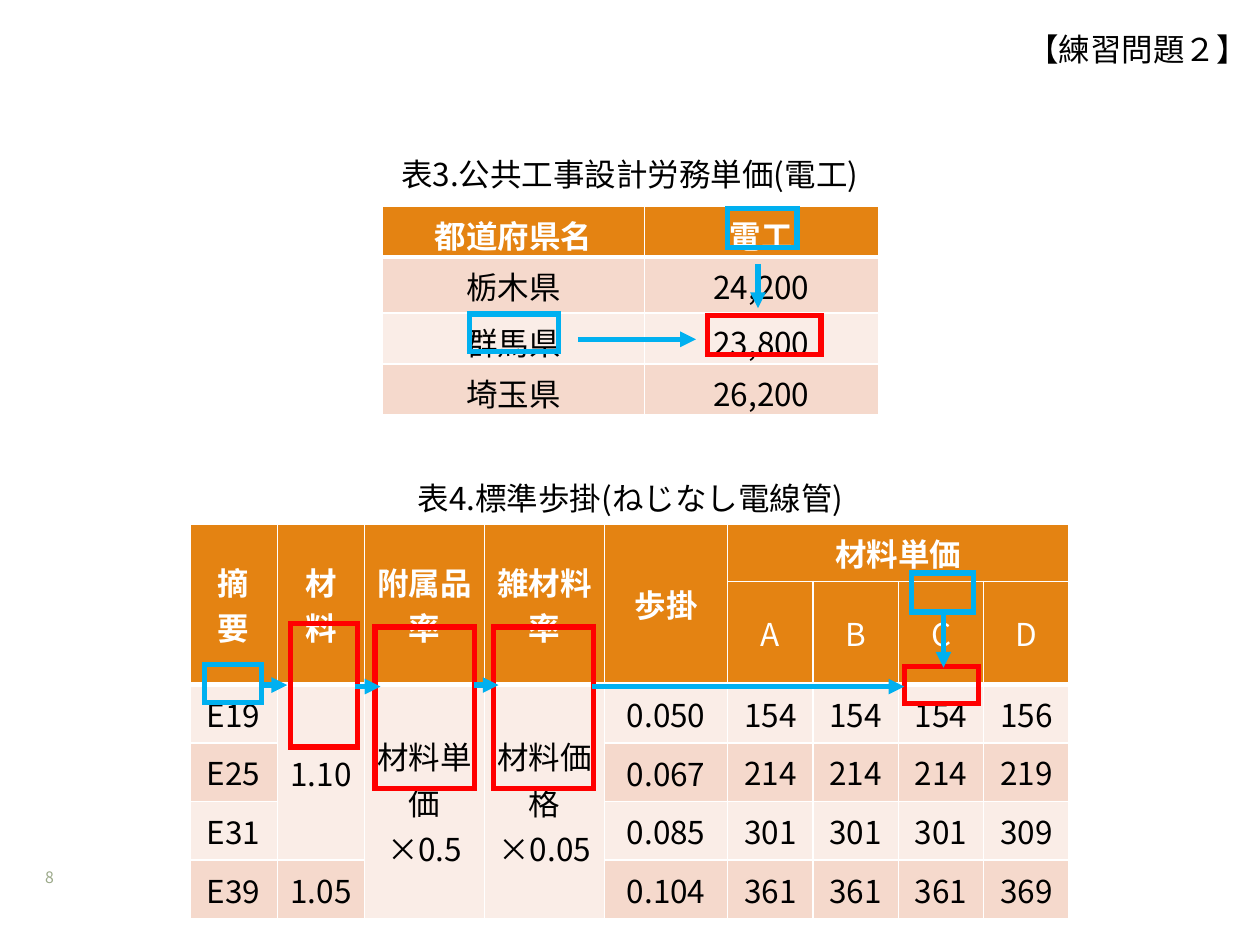
from dataclasses import dataclass

from lxml import etree
from pptx import Presentation
from pptx.dml.color import RGBColor
from pptx.enum.shapes import MSO_CONNECTOR, MSO_SHAPE
from pptx.enum.text import MSO_ANCHOR, PP_ALIGN
from pptx.oxml.ns import qn
from pptx.util import Cm, Pt

STRAIGHT = MSO_CONNECTOR.STRAIGHT
RECT = MSO_SHAPE.RECTANGLE
TOP, MIDDLE = MSO_ANCHOR.TOP, MSO_ANCHOR.MIDDLE
LEFT, CENTER, RIGHT = PP_ALIGN.LEFT, PP_ALIGN.CENTER, PP_ALIGN.RIGHT


@dataclass(frozen=True)
class Theme:
    font: str = "Noto Sans CJK JP"
    body: int = 18
    small: int = 9
    rule: int = 1
    thick: int = 3
    white: str = "FFFFFF"
    black: str = "000000"
    header: str = "E48312"
    dark_band: str = "F5D9CC"
    light_band: str = "FAEDE7"
    key: str = "00B0F0"
    result: str = "FF0000"
    page: str = "9AA888"


THEME = Theme()


def rgb(value):
    return RGBColor.from_string(value)


def write(tf, text, color, size=THEME.body, align=CENTER, bold=False):
    p = tf.paragraphs[0]
    p.alignment = align
    r = p.add_run()
    r.text = text
    r.font.size = Pt(size)
    r.font.bold = bold
    r.font.color.rgb = rgb(color)
    r.font.name = THEME.font
    ea = etree.SubElement(r.font._element, qn("a:ea"))
    ea.set("typeface", THEME.font)


def add_label(slide, box, text, color=THEME.black, anchor=TOP, **style):
    tf = slide.shapes.add_textbox(*map(Cm, box)).text_frame
    tf.word_wrap = True
    tf.vertical_anchor = anchor
    write(tf, text, color, **style)


def add_frame(slide, box, color):
    sp = slide.shapes.add_shape(RECT, *map(Cm, box))
    sp.shadow.inherit = False
    sp.fill.background()
    sp.line.color.rgb = rgb(color)
    sp.line.width = Pt(THEME.thick)
    etree.SubElement(sp.line._get_or_add_ln(), qn("a:miter"), lim="800000")


def add_arrow(slide, x1, y1, x2, y2):
    line = slide.shapes.add_connector(STRAIGHT, Cm(x1), Cm(y1), Cm(x2), Cm(y2))
    line.line.color.rgb = rgb(THEME.key)
    line.line.width = Pt(THEME.thick)
    etree.SubElement(line.line._get_or_add_ln(), qn("a:tailEnd"), type="triangle")
    etree.SubElement(line._element.spPr, qn("a:effectLst"))


def set_borders(cell, top, bottom):
    """White rules on all four sides; the side rules are thin."""
    tcPr = cell._tc.get_or_add_tcPr()
    widths = {"lnL": THEME.rule, "lnR": THEME.rule, "lnT": top, "lnB": bottom}
    for i, (side, width) in enumerate(widths.items()):
        ln = etree.Element(qn("a:" + side), w=str(Pt(width)))
        fill = etree.SubElement(ln, qn("a:solidFill"))
        etree.SubElement(fill, qn("a:srgbClr"), val=THEME.white)
        tcPr.insert(i, ln)


def add_grid(slide, left, top, cols, heights, rows, bands, header_rows=1, merges=()):
    """Table whose header is orange and whose body rows alternate over bands."""
    frame = slide.shapes.add_table(len(rows), len(cols), Cm(left), Cm(top),
                                   Cm(sum(cols)), Cm(sum(heights)))
    table = frame.table
    table.first_row = table.horz_banding = False
    for col, width in zip(table.columns, cols):
        col.width = Cm(width)
    for row, height in zip(table.rows, heights):
        row.height = Cm(height)
    for r1, c1, r2, c2 in merges:
        table.cell(r1, c1).merge(table.cell(r2, c2))
    for r, texts in enumerate(rows):
        is_header = r < header_rows
        color = THEME.white if is_header else THEME.black
        fill = THEME.header if is_header else bands[(r - header_rows) % len(bands)]
        for c, text in enumerate(texts):
            cell = table.cell(r, c)
            cell.fill.solid()
            cell.fill.fore_color.rgb = rgb(fill)
            end = r + (cell.span_height if cell.is_merge_origin else 1)
            set_borders(cell,
                        THEME.thick if r == header_rows else THEME.rule,
                        THEME.thick if end == header_rows else THEME.rule)
            if text:
                write(cell.text_frame, text, color, bold=r == 0)
    return table


def add_marks(slide, left, top, frames, arrows):
    """Frames and arrows placed from the table's top left corner."""
    for color, (x, y, w, h) in frames:
        add_frame(slide, (left + x, top + y, w, h), color)
    for x1, y1, x2, y2 in arrows:
        add_arrow(slide, left + x1, top + y1, left + x2, top + y2)


def add_labor_table(slide, left, top):
    rows = [("都道府県名", "電工"), ("栃木県", "24,200"),
            ("群馬県", "23,800"), ("埼玉県", "26,200")]
    table = add_grid(slide, left, top, (5.28, 4.72), (1.03, 1.13, 1.03, 1.03), rows,
                     (THEME.dark_band, THEME.light_band))
    for cell in table.iter_cells():
        cell.margin_bottom = 0
    frames = [(THEME.key, (1.75, 2.18, 1.8, 0.76)),
              (THEME.key, (6.96, 0.05, 1.4, 0.79)),
              (THEME.result, (6.55, 2.21, 2.29, 0.79))]
    arrows = [(7.57, 1.17, 7.57, 2.06), (3.94, 2.69, 6.32, 2.69)]
    add_marks(slide, left, top, frames, arrows)
    add_label(slide, (left - 1.1, top - 1.14, 12.17, 1.02),
              "表3.公共工事設計労務単価(電工)")


def add_conduit_table(slide, left, top):
    rows = [
        ("摘要", "材料", "附属品率", "雑材料率", "歩掛", "材料単価", "", "", ""),
        ("", "", "", "", "", "A", "B", "C", "D"),
        ("E19", "1.10", "材料単価×0.5", "材料価格×0.05", "0.050", "154", "154", "154", "156"),
        ("E25", "", "", "", "0.067", "214", "214", "214", "219"),
        ("E31", "", "", "", "0.085", "301", "301", "301", "309"),
        ("E39", "1.05", "", "", "0.104", "361", "361", "361", "369"),
    ]
    merges = [(0, c, 1, c) for c in range(5)]
    merges += [(0, 5, 0, 8), (2, 1, 4, 1), (2, 2, 5, 2), (2, 3, 5, 3)]
    cols = (1.76, 1.76, 2.42, 2.42, 2.48) + (1.72,) * 4
    table = add_grid(slide, left, top, cols, (1.16, 2.08) + (1.18,) * 4, rows,
                     (THEME.light_band, THEME.dark_band), 2, merges)
    for r in range(len(rows)):
        for c in range(len(cols)):
            if 1 <= c <= 4 or (r < 2 and (r, c) != (0, 5)):
                table.cell(r, c).vertical_anchor = MIDDLE
    frames = [(THEME.key, (0.3, 2.84, 1.14, 0.76)),
              (THEME.key, (14.55, 0.99, 1.24, 0.79)),
              (THEME.result, (14.4, 2.87, 1.5, 0.76)),
              (THEME.result, (2.03, 2.01, 1.35, 2.49)),
              (THEME.result, (3.73, 2.08, 2.01, 3.25)),
              (THEME.result, (6.12, 2.08, 2.01, 3.25))]
    arrows = [(1.45, 3.25, 1.96, 3.25), (3.33, 3.28, 3.84, 3.28),
              (5.72, 3.25, 6.22, 3.25), (8.1, 3.28, 14.4, 3.28),
              (15.19, 1.8, 15.19, 2.9)]
    add_marks(slide, left, top, frames, arrows)
    add_label(slide, (left + 3.23, top - 1.03, 11.3, 1.02),
              "表4.標準歩掛(ねじなし電線管)")


def main():
    prs = Presentation()
    prs.slide_width, prs.slide_height = Cm(25.4), Cm(19.05)
    slide = prs.slides.add_slide(prs.slide_layouts[6])
    add_label(slide, (20.4, 0.48, 5, 1.02), "【練習問題２】", align=RIGHT)
    add_labor_table(slide, 7.71, 4.15)
    add_conduit_table(slide, 3.83, 10.56)
    add_label(slide, (0.66, 17.41, 1.5, 0.56), "8", THEME.page, MIDDLE,
              size=THEME.small, align=LEFT)
    prs.save("out.pptx")


if __name__ == "__main__":
    main()
